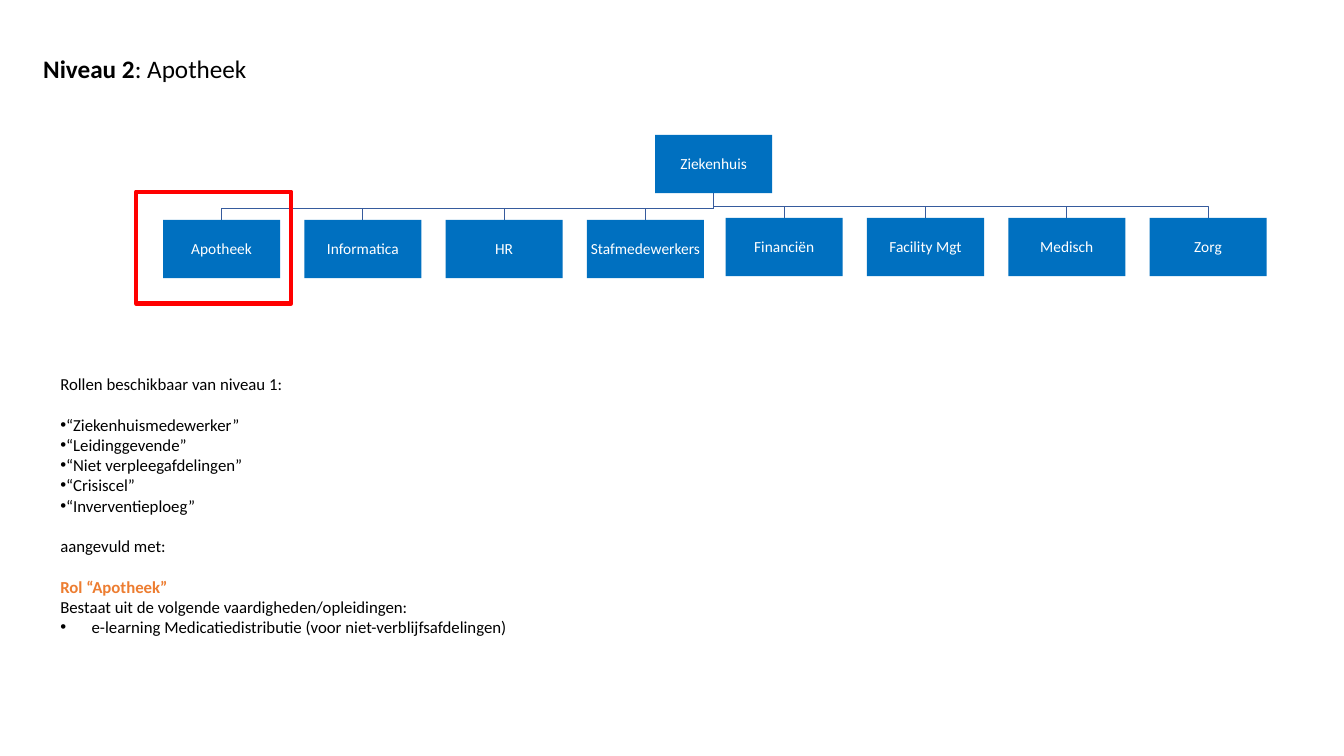
from dataclasses import dataclass

from lxml import etree
from pptx import Presentation
from pptx.dml.color import RGBColor
from pptx.enum.shapes import MSO_SHAPE
from pptx.enum.text import MSO_ANCHOR, MSO_AUTO_SIZE, PP_ALIGN
from pptx.oxml.ns import qn
from pptx.util import Cm, Pt

RECT = MSO_SHAPE.RECTANGLE
MIDDLE = MSO_ANCHOR.MIDDLE
CENTER = PP_ALIGN.CENTER
GROW = MSO_AUTO_SIZE.SHAPE_TO_FIT_TEXT

WHITE = RGBColor(0xFF, 0xFF, 0xFF)
BLACK = RGBColor(0x00, 0x00, 0x00)
BLUE = RGBColor(0x00, 0x70, 0xC0)
LINE_BLUE = RGBColor(0x36, 0x5B, 0x9D)
RED = RGBColor(0xFF, 0x00, 0x00)
ORANGE = RGBColor(0xED, 0x7D, 0x31)

FONT = "Calibri"
BOX_W, BOX_H = 2.95, 1.47
BOX_STEP = 3.56
DROP = 0.3
HANGING = 0.79
BLANK_LINE = Pt(14.6)


@dataclass
class Unit:
    name: str
    left: float
    top: float

    @property
    def center(self) -> float:
        return self.left + BOX_W / 2


@dataclass
class Line:
    text: str
    bullet_indent: float | None = None
    gap: bool = False
    color: RGBColor = BLACK
    bold: bool = False


def row(names: list[str], left: float, top: float) -> list[Unit]:
    return [Unit(name, left + i * BOX_STEP, top) for i, name in enumerate(names)]


ROOT = Unit("Ziekenhuis", 16.51, 3.4)
DEPARTMENTS = (
    row(["Apotheek", "Informatica", "HR", "Stafmedewerkers"], 4.11, 5.54)
    + row(["Financiën", "Facility Mgt", "Medisch", "Zorg"], 18.29, 5.49)
)
ROLES = [
    Line("Rollen beschikbaar van niveau 1:"),
    Line("“Ziekenhuismedewerker”", 0, gap=True),
    Line("“Leidinggevende”", 0),
    Line("“Niet verpleegafdelingen”", 0),
    Line("“Crisiscel”", 0),
    Line("“Inverventieploeg”", 0),
    Line("aangevuld met:", gap=True),
    Line("Rol “Apotheek”", gap=True, color=ORANGE, bold=True),
    Line("Bestaat uit de volgende vaardigheden/opleidingen:"),
    Line("e-learning Medicatiedistributie (voor niet-verblijfsafdelingen)", HANGING),
]


def add_run(p, text: str, size: float, color: RGBColor, bold: bool = False) -> None:
    r = p.add_run()
    r.text = text
    for name, value in {"name": FONT, "size": Pt(size), "bold": bold}.items():
        setattr(r.font, name, value)
    r.font.color.rgb = color


def add_bullet(p, indent: float) -> None:
    pPr = p._p.get_or_add_pPr()
    pPr.set("marL", str(Cm(indent)))
    pPr.set("indent", str(Cm(-HANGING)))
    etree.SubElement(pPr, qn("a:buFont"), typeface="Arial")
    etree.SubElement(pPr, qn("a:buChar"), char="•")


def draw_branch(s, unit: Unit) -> None:
    start, bend = ROOT.top + BOX_H, unit.top - DROP
    points = [(ROOT.center, bend), (unit.center, bend), (unit.center, unit.top)]
    builder = s.shapes.build_freeform(Cm(ROOT.center), Cm(start))
    builder.add_line_segments([(Cm(x), Cm(y)) for x, y in points], close=False)
    sp = builder.convert_to_shape()
    sp.shadow.inherit = False
    sp.fill.background()
    sp.line.color.rgb = LINE_BLUE
    sp.line.width = Pt(0.5)


def draw_unit(s, unit: Unit) -> None:
    sp = s.shapes.add_shape(RECT, Cm(unit.left), Cm(unit.top), Cm(BOX_W), Cm(BOX_H))
    sp.shadow.inherit = False
    sp.fill.solid()
    sp.fill.fore_color.rgb = BLUE
    sp.line.fill.background()
    tf = sp.text_frame
    inset = Cm(0.02)
    frame = {"margin_left": inset, "margin_right": inset, "margin_top": inset,
             "margin_bottom": inset, "vertical_anchor": MIDDLE, "word_wrap": True}
    for name, value in frame.items():
        setattr(tf, name, value)
    p = tf.paragraphs[0]
    p.alignment = CENTER
    p.line_spacing = 0.9
    add_run(p, unit.name, 11, WHITE)


def main() -> None:
    prs = Presentation()
    prs.slide_width, prs.slide_height = Cm(33.87), Cm(19.05)
    s = prs.slides.add_slide(prs.slide_layouts[6])

    # Organisation chart
    for unit in DEPARTMENTS:
        draw_branch(s, unit)
    for unit in [ROOT, *DEPARTMENTS]:
        draw_unit(s, unit)

    # Title
    tf = s.shapes.add_textbox(Cm(0.84), Cm(1.22), Cm(10.31), Cm(1.03)).text_frame
    tf.word_wrap = True
    tf.auto_size = GROW
    add_run(tf.paragraphs[0], "Niveau 2", 18, BLACK, bold=True)
    add_run(tf.paragraphs[0], ": Apotheek", 18, BLACK)

    # Red frame around the pharmacy
    frame = s.shapes.add_shape(RECT, Cm(3.43), Cm(4.83), Cm(3.91), Cm(2.82))
    frame.shadow.inherit = False
    frame.fill.background()
    frame.line.color.rgb = RED
    frame.line.width = Pt(3)

    # Roles
    tf = s.shapes.add_textbox(Cm(1.27), Cm(9.3), Cm(11.89), Cm(8.97)).text_frame
    tf.word_wrap = False
    tf.auto_size = GROW
    for i, line in enumerate(ROLES):
        p = tf.add_paragraph() if i else tf.paragraphs[0]
        if line.bullet_indent is not None:
            add_bullet(p, line.bullet_indent)
        if line.gap:
            p.space_before = BLANK_LINE
        add_run(p, line.text, 12, line.color, line.bold)

    prs.save("out.pptx")


if __name__ == "__main__":
    main()
